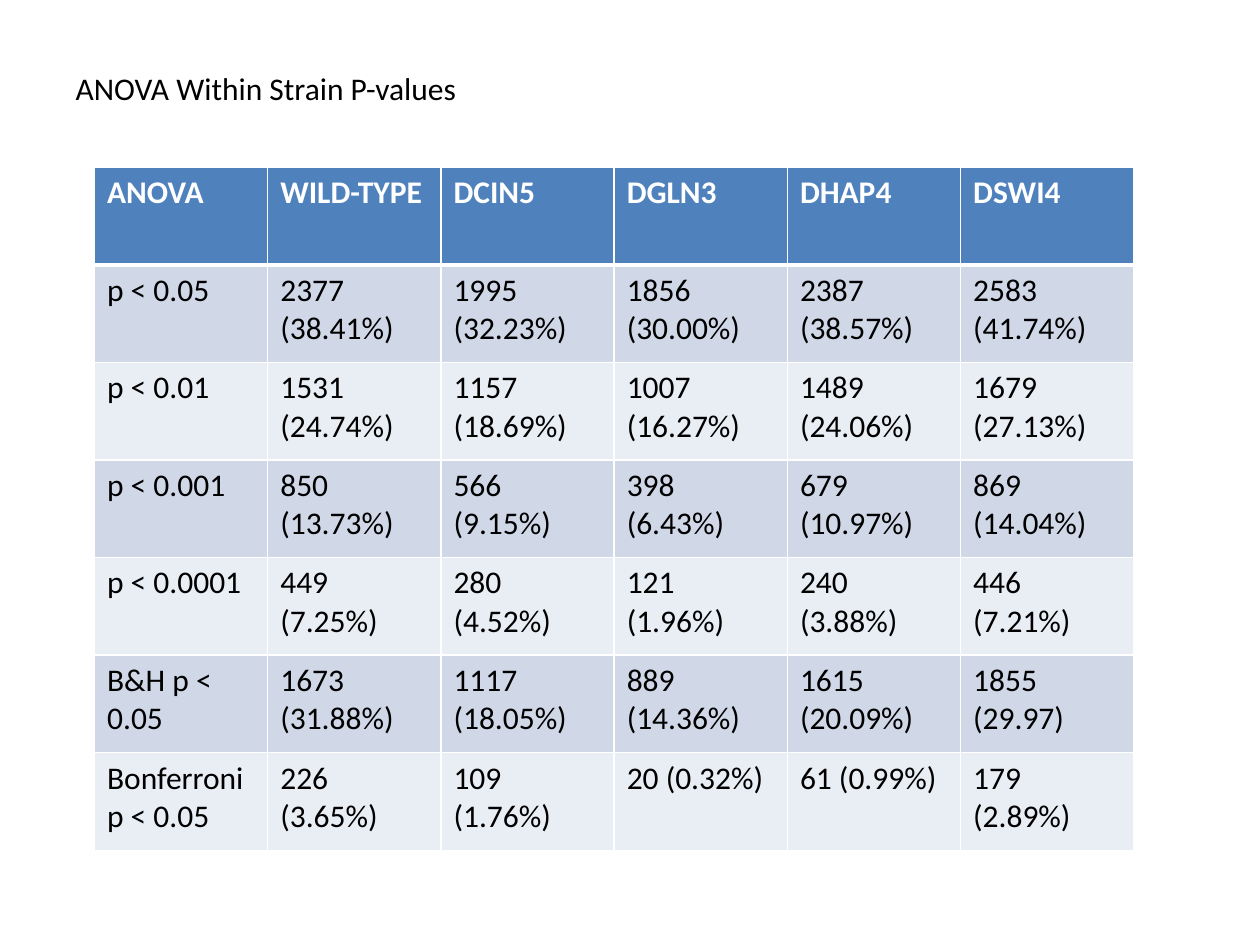
from dataclasses import dataclass

from lxml.etree import SubElement
from pptx import Presentation
from pptx.dml.color import RGBColor as RGB
from pptx.enum.text import MSO_ANCHOR, MSO_AUTO_SIZE, PP_ALIGN
from pptx.oxml.ns import qn
from pptx.util import Inches, Pt


@dataclass(frozen=True)
class Theme:
    font: str = "Calibri"
    size: int = 18
    ink: str = "000000"
    white: str = "FFFFFF"
    header: str = "4F81BD"
    bands: tuple = ("D0D8E8", "E9EDF4")
    rule: int = 1
    header_rule: int = 3


THEME = Theme()
WIDTH, HEIGHT = 10, 7.5

ROWS = [
    ("ANOVA", "WILD-TYPE", "DCIN5", "DGLN3", "DHAP4", "DSWI4"),
    ("p < 0.05", "2377 (38.41%)", "1995 (32.23%)", "1856 (30.00%)", "2387 (38.57%)", "2583 (41.74%)"),
    ("p < 0.01", "1531 (24.74%)", "1157 (18.69%)", "1007 (16.27%)", "1489 (24.06%)", "1679 (27.13%)"),
    ("p < 0.001", "850 (13.73%)", "566 (9.15%)", "398 (6.43%)", "679 (10.97%)", "869 (14.04%)"),
    ("p < 0.0001", "449 (7.25%)", "280 (4.52%)", "121 (1.96%)", "240 (3.88%)", "446 (7.21%)"),
    ("B&H p < 0.05", "1673 (31.88%)", "1117 (18.05%)", "889 (14.36%)", "1615 (20.09%)", "1855 (29.97)"),
    ("Bonferroni p < 0.05", "226 (3.65%)", "109 (1.76%)", "20 (0.32%)", "61 (0.99%)", "179 (2.89%)"),
]


def format_text(tf, color, bold=False):
    for p in tf.paragraphs:
        p.alignment = PP_ALIGN.LEFT
        for r in p.runs:
            r.font.name, r.font.size, r.font.bold = THEME.font, Pt(THEME.size), bold
            r.font.color.rgb = RGB.from_string(color)


def set_borders(cell, top, bottom):
    """Draw white rules on all four sides; widths are in points."""
    tcPr = cell._tc.get_or_add_tcPr()
    sides = {"L": THEME.rule, "R": THEME.rule, "T": top, "B": bottom}
    for side, width in sides.items():
        ln = SubElement(tcPr, qn(f"a:ln{side}"), w=str(Pt(width)))
        SubElement(SubElement(ln, qn("a:solidFill")), qn("a:srgbClr"), val=THEME.white)


def set_title(s, text):
    sp = s.shapes.title
    sp.left, sp.top = Inches(0.05 * WIDTH), Inches(0.5)
    sp.width, sp.height = Inches(8.75), Inches(0.42)
    tf = sp.text_frame
    tf.text = text
    tf.word_wrap = True
    tf.auto_size = MSO_AUTO_SIZE.SHAPE_TO_FIT_TEXT
    tf.vertical_anchor = MSO_ANCHOR.TOP
    format_text(tf, THEME.ink)


def add_results_table(s, rows, left, top, width, height):
    frame = s.shapes.add_table(len(rows), len(rows[0]), Inches(left), Inches(top),
                               Inches(width), Inches(height))
    for i, values in enumerate(rows):
        is_header = i == 0
        fill = THEME.header if is_header else THEME.bands[(i - 1) % 2]
        color = THEME.white if is_header else THEME.ink
        above = THEME.header_rule if i == 1 else THEME.rule
        below = THEME.header_rule if is_header else THEME.rule
        for j, value in enumerate(values):
            cell = frame.table.cell(i, j)
            cell.text = value
            format_text(cell.text_frame, color, bold=is_header)
            set_borders(cell, above, below)
            cell.fill.solid()
            cell.fill.fore_color.rgb = RGB.from_string(fill)


def main():
    prs = Presentation()
    prs.slide_width, prs.slide_height = Inches(WIDTH), Inches(HEIGHT)
    s = prs.slides.add_slide(prs.slide_layouts.get_by_name("Title Only"))

    # Heading
    set_title(s, "ANOVA Within Strain P-values")

    # Counts and shares by strain
    add_results_table(s, ROWS, left=0.75, top=1.33, width=8.25, height=5.42)

    prs.save("out.pptx")


if __name__ == "__main__":
    main()
